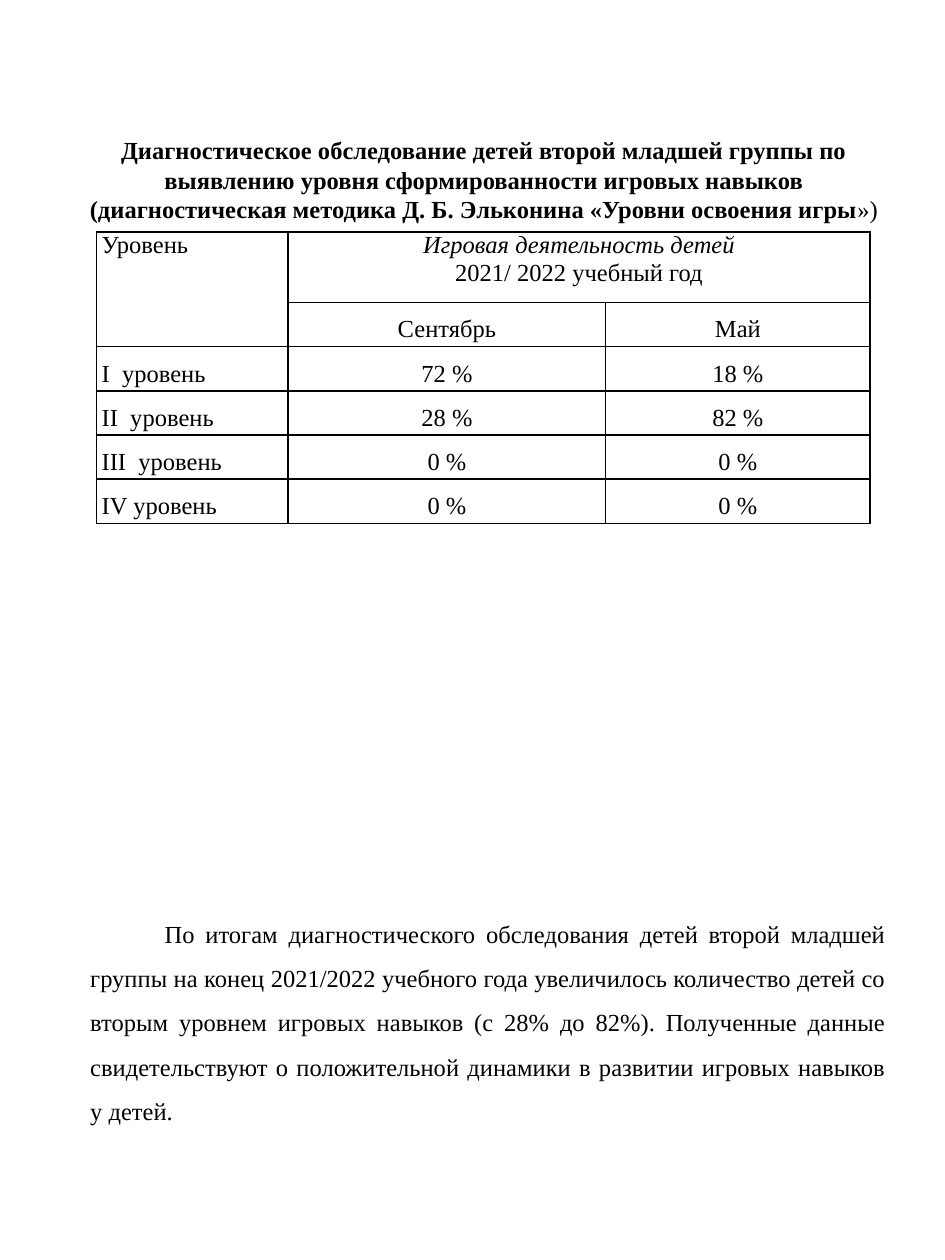
from lxml.etree import SubElement
from pptx import Presentation
from pptx.dml.color import RGBColor
from pptx.enum.text import MSO_ANCHOR, MSO_AUTO_SIZE, PP_ALIGN as Align
from pptx.oxml.ns import qn
from pptx.util import Cm, Pt

COLORS = {"text": "000000", "border": "000000"}
FONT = "Times New Roman"


def add_span(para, text, bold=False, italic=False):
    span = para.add_run()
    span.text = text
    span.font.name = FONT
    span.font.size = Pt(14)
    span.font.bold = bold
    span.font.italic = italic
    span.font.color.rgb = RGBColor.from_string(COLORS["text"])


def add_borders(cell):
    properties = cell._tc.get_or_add_tcPr()
    for side in ("lnL", "lnR", "lnT", "lnB"):
        line = SubElement(properties, qn(f"a:{side}"), w=str(Pt(1)))
        fill = SubElement(line, qn("a:solidFill"))
        SubElement(fill, qn("a:srgbClr"), val=COLORS["border"])


deck = Presentation()
deck.slide_width, deck.slide_height = Cm(19.05), Cm(25.4)
page = deck.slides.add_slide(deck.slide_layouts[5])

title = page.shapes.title
title.left, title.top, title.width, title.height = Cm(1.4), Cm(2.59), Cm(16.71), Cm(2.06)
title.text_frame.word_wrap = True
title.text_frame.auto_size = MSO_AUTO_SIZE.NONE
title.text_frame.vertical_anchor = MSO_ANCHOR.MIDDLE
para = title.text_frame.paragraphs[0]
para.alignment = Align.CENTER
add_span(
    para,
    "Диагностическое обследование детей второй младшей группы по выявлению уровня "
    "сформированности игровых навыков (диагностическая методика Д. Б. Эльконина "
    "«Уровни освоения игры",
    bold=True,
)
add_span(para, "»)")

levels = [
    ("", "Сентябрь", "Май"),
    ("I  уровень", "72 %", "18 %"),
    ("II  уровень", "28 %", "82 %"),
    ("III  уровень", "0 %", "0 %"),
    ("IV уровень", "0 %", "0 %"),
]
column_widths = [3.86, 6.4, 5.33]
row_heights = [1.42] + [0.89] * len(levels)
table = page.shapes.add_table(
    len(row_heights), len(column_widths),
    Cm(1.95), Cm(4.68), Cm(sum(column_widths)), Cm(sum(row_heights)),
).table
table.first_row = table.horz_banding = False
for column, width in zip(table.columns, column_widths):
    column.width = Cm(width)
for row, height in zip(table.rows, row_heights):
    row.height = Cm(height)
for cell in table.iter_cells():
    add_borders(cell)
    cell.fill.background()
    cell.margin_left = cell.margin_right = Cm(0.1)
    cell.margin_top = cell.margin_bottom = 0
table.cell(0, 0).merge(table.cell(1, 0))
table.cell(0, 1).merge(table.cell(0, 2))

add_span(table.cell(0, 0).text_frame.paragraphs[0], "Уровень")
heading = table.cell(0, 1).text_frame
for para, text, italic in (
    (heading.paragraphs[0], "Игровая деятельность детей", True),
    (heading.add_paragraph(), "2021/ 2022 учебный год", False),
):
    para.alignment = Align.CENTER
    add_span(para, text, italic=italic)

for row_index, values in enumerate(levels, start=1):
    for column_index, text in enumerate(values):
        if text:
            para = table.cell(row_index, column_index).text_frame.paragraphs[0]
            para.alignment = Align.CENTER if column_index else Align.LEFT
            para.line_spacing = 1.5
            add_span(para, text)

summary = page.shapes.add_textbox(Cm(1.57), Cm(18.11), Cm(16.54), Cm(4.75))
summary.text_frame.word_wrap = True
para = summary.text_frame.paragraphs[0]
para.alignment = Align.JUSTIFY
para.line_spacing = 1.5
para._p.get_or_add_pPr().set("indent", str(Cm(1.5)))
add_span(
    para,
    "По итогам диагностического обследования детей второй младшей группы на конец "
    "2021/2022 учебного года увеличилось количество детей со вторым уровнем игровых "
    "навыков (с 28% до 82%). Полученные данные свидетельствуют о положительной "
    "динамики в развитии игровых навыков у детей.",
)

deck.save("out.pptx")
